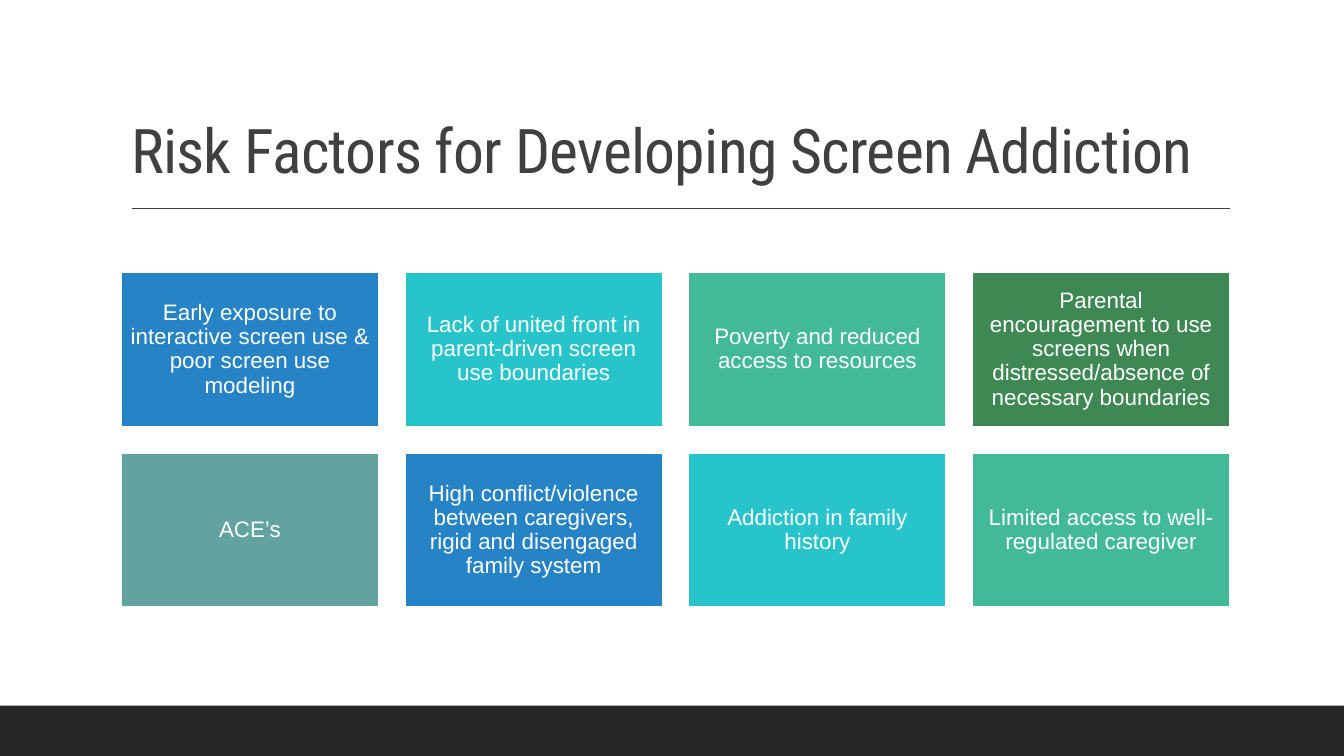
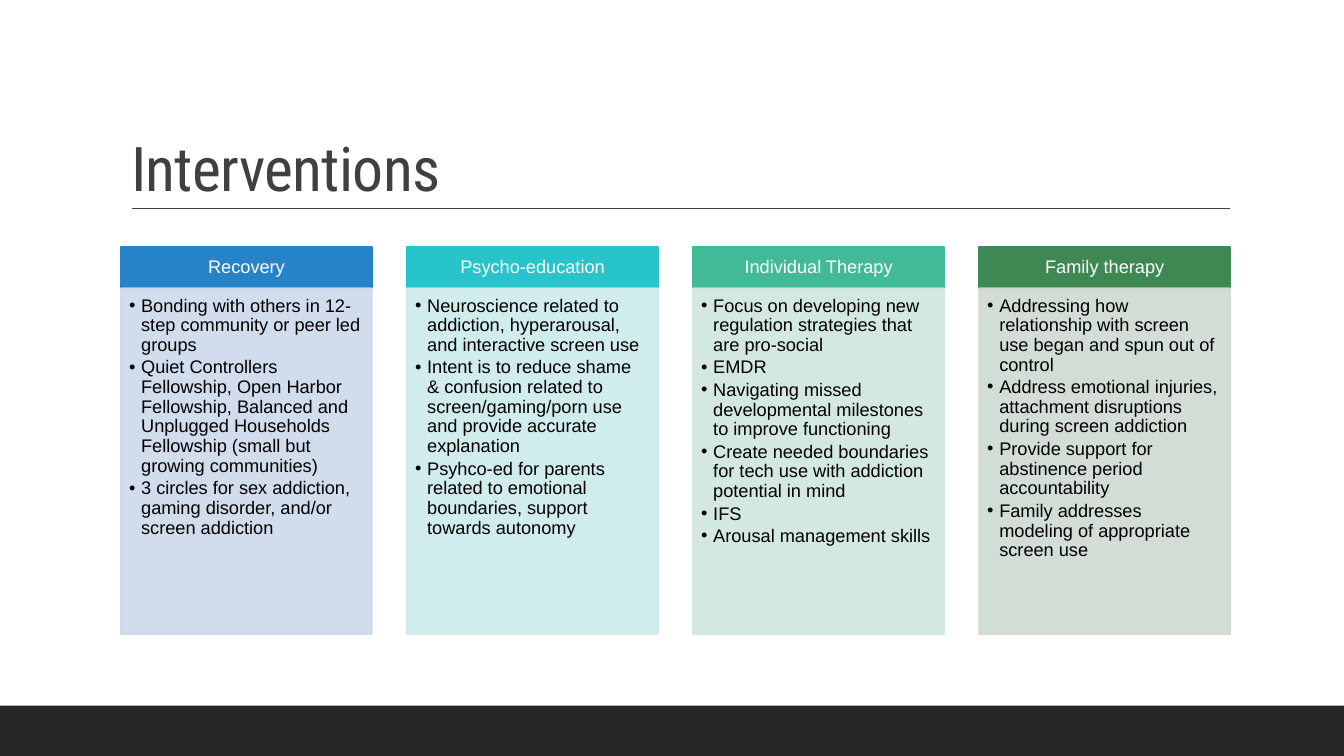
from lxml import etree
from pptx import Presentation, util as u
from pptx.dml.color import RGBColor
from pptx.enum import shapes, text
from pptx.oxml.ns import qn

WIDTH, HEIGHT = 13.33, 7.5
BLUE, CYAN, MINT, GREEN, TEAL = "2683C6", "28C4CC", "42BA97", "3E8853", "62A39F"
WHITE, BLACK, GREY, DARK = "FFFFFF", "000000", "404040", "262626"
CONTENT_LEFT, CONTENT_WIDTH = 1.2, 11
COLUMNS = 4

TITLE = {"name": "Roboto Condensed", "size": u.Pt(44)}
CARD = {"name": "Arial", "size": u.Pt(16)}
PANEL = {"name": "Arial", "size": u.Pt(13)}

RISKS = [
    ("Early exposure to interactive screen use & poor screen use modeling", BLUE),
    ("Lack of united front in parent-driven screen use boundaries", CYAN),
    ("Poverty and reduced access to resources", MINT),
    ("Parental encouragement to use screens when distressed/absence of "
     "necessary boundaries", GREEN),
    ("ACE’s", TEAL),
    ("High conflict/violence between caregivers, rigid and disengaged "
     "family system", BLUE),
    ("Addiction in family history", CYAN),
    ("Limited access to well-regulated caregiver", MINT),
]

INTERVENTIONS = [
    ("Recovery", BLUE, "CDD9EA", [
        "Bonding with others in 12-step community or peer led groups",
        "Quiet Controllers Fellowship, Open Harbor Fellowship, Balanced and "
        "Unplugged Households Fellowship (small but growing communities)",
        "3 circles for sex addiction, gaming disorder, and/or screen addiction",
    ]),
    ("Psycho-education", CYAN, "CDEAEC", [
        "Neuroscience related to addiction, hyperarousal, and interactive screen use",
        "Intent is to reduce shame & confusion related to screen/gaming/porn use "
        "and provide accurate explanation",
        "Psyhco-ed for parents related to emotional boundaries, support towards autonomy",
    ]),
    ("Individual Therapy", MINT, "CFE7DD", [
        "Focus on developing new regulation strategies that are pro-social",
        "EMDR",
        "Navigating missed developmental milestones to improve functioning",
        "Create needed boundaries for tech use with addiction potential in mind",
        "IFS",
        "Arousal management skills",
    ]),
    ("Family therapy", GREEN, "CEDAD1", [
        "Addressing how relationship with screen use began and spun out of control",
        "Address emotional injuries, attachment disruptions during screen addiction",
        "Provide support for abstinence period accountability",
        "Family addresses modeling of appropriate screen use",
    ]),
]


def rgb(value):
    return RGBColor.from_string(value)


def apply(target, values):
    for name, value in values.items():
        setattr(target, name, value)


def inches(*lengths):
    return [u.Inches(length) for length in lengths]


def write(sp, lines, font, color, insets, anchor, align, after=0):
    """Fill the shape with one formatted paragraph per line."""
    tf = sp.text_frame
    sides = ("margin_left", "margin_top", "margin_right", "margin_bottom")
    apply(tf, dict(zip(sides, inches(*insets))))
    apply(tf, {"word_wrap": True, "auto_size": text.MSO_AUTO_SIZE.NONE,
               "vertical_anchor": anchor})
    for i, line in enumerate(lines):
        p = tf.add_paragraph() if i else tf.paragraphs[0]
        apply(p, {"alignment": align, "line_spacing": 0.9,
                  "space_before": u.Pt(0), "space_after": u.Pt(after)})
        r = p.add_run()
        r.text = line
        apply(r.font, font)
        r.font.color.rgb = rgb(color)


def add_bullets(sp, indent):
    for p in sp.text_frame.paragraphs:
        ppr = p._p.get_or_add_pPr()
        ppr.set("marL", str(u.Inches(indent)))
        ppr.set("indent", str(-u.Inches(indent)))
        etree.SubElement(ppr, qn("a:buFont")).set("typeface", "Arial")
        etree.SubElement(ppr, qn("a:buChar")).set("char", "•")


def add_box(slide, box, fill, line=None, opacity=100):
    sp = slide.shapes.add_shape(shapes.MSO_SHAPE.RECTANGLE, *inches(*box))
    sp.shadow.inherit = False
    sp.fill.solid()
    sp.fill.fore_color.rgb = rgb(fill)
    if line:
        sp.line.color.rgb = rgb(line)
        sp.line.width = u.Pt(1.25)
    else:
        sp.line.fill.background()
    if opacity < 100:
        for color in sp._element.spPr.iter(qn("a:srgbClr")):
            etree.SubElement(color, qn("a:alpha")).set("val", str(opacity * 1000))
    return sp


def add_base(prs, title, title_top):
    """Add a slide with the shared title style, rule and bottom band."""
    slide = prs.slides.add_slide(prs.slide_layouts[5])
    sp = slide.shapes.title
    box = inches(CONTENT_LEFT, title_top, CONTENT_WIDTH, 1.59)
    apply(sp, dict(zip(("left", "top", "width", "height"), box)))
    write(sp, [title], TITLE, GREY, (0.1, 0.05, 0.1, 0.05),
          text.MSO_ANCHOR.BOTTOM, text.PP_ALIGN.LEFT)
    sp.text_frame.paragraphs[0].runs[0].font._element.set("spc", "-50")

    rule = slide.shapes.add_connector(shapes.MSO_CONNECTOR.STRAIGHT,
                                      *inches(1.31, 2.07, 12.2, 2.07))
    rule.line.color.rgb = rgb(GREY)
    rule.line.width = u.Pt(1.25)
    etree.SubElement(rule._element.spPr, qn("a:effectLst"))
    add_box(slide, (0, 7, WIDTH, 0.5), DARK)
    return slide


def column_sizes(width, gap_share):
    """Return column width and gap, the gap being a share of the column."""
    column = width / (COLUMNS + (COLUMNS - 1) * gap_share)
    return column, column * gap_share


def card_grid(slide, left, top, width, cards):
    card_width, gap = column_sizes(width, 0.1)
    card_height = card_width * 0.6
    for i, (label, color) in enumerate(cards):
        row, col = divmod(i, COLUMNS)
        box = (left + col * (card_width + gap), top + row * (card_height + gap),
               card_width, card_height)
        write(add_box(slide, box, color, WHITE), [label], CARD, WHITE, (0.07,) * 4,
              text.MSO_ANCHOR.MIDDLE, text.PP_ALIGN.CENTER)


def panel(slide, left, top, width, height, content):
    heading, color, tint, items = content
    head_height = 0.41
    head = add_box(slide, (left, top, width, head_height), color, color)
    write(head, [heading], PANEL, WHITE, (0.1, 0.06, 0.1, 0.06),
          text.MSO_ANCHOR.MIDDLE, text.PP_ALIGN.CENTER)
    body = add_box(slide, (left, top + head_height, width, height - head_height),
                   tint, tint, opacity=90)
    write(body, items, PANEL, BLACK, (0.08, 0.08, 0.1, 0.11),
          text.MSO_ANCHOR.TOP, text.PP_ALIGN.LEFT, after=2)
    add_bullets(body, 0.12)


def panel_row(slide, left, top, width, height, panels):
    panel_width, gap = column_sizes(width, 0.14)
    for i, content in enumerate(panels):
        panel(slide, left + i * (panel_width + gap), top, panel_width, height, content)


def main():
    prs = Presentation()
    apply(prs, {"slide_width": u.Inches(WIDTH), "slide_height": u.Inches(HEIGHT)})
    risks = add_base(prs, "Risk Factors for Developing Screen Addiction", 0.31)
    card_grid(risks, CONTENT_LEFT, 2.7, CONTENT_WIDTH, RISKS)
    interventions = add_base(prs, "Interventions", 0.49)
    panel_row(interventions, CONTENT_LEFT, 2.45, CONTENT_WIDTH, 3.84, INTERVENTIONS)
    prs.save("out.pptx")


if __name__ == "__main__":
    main()
